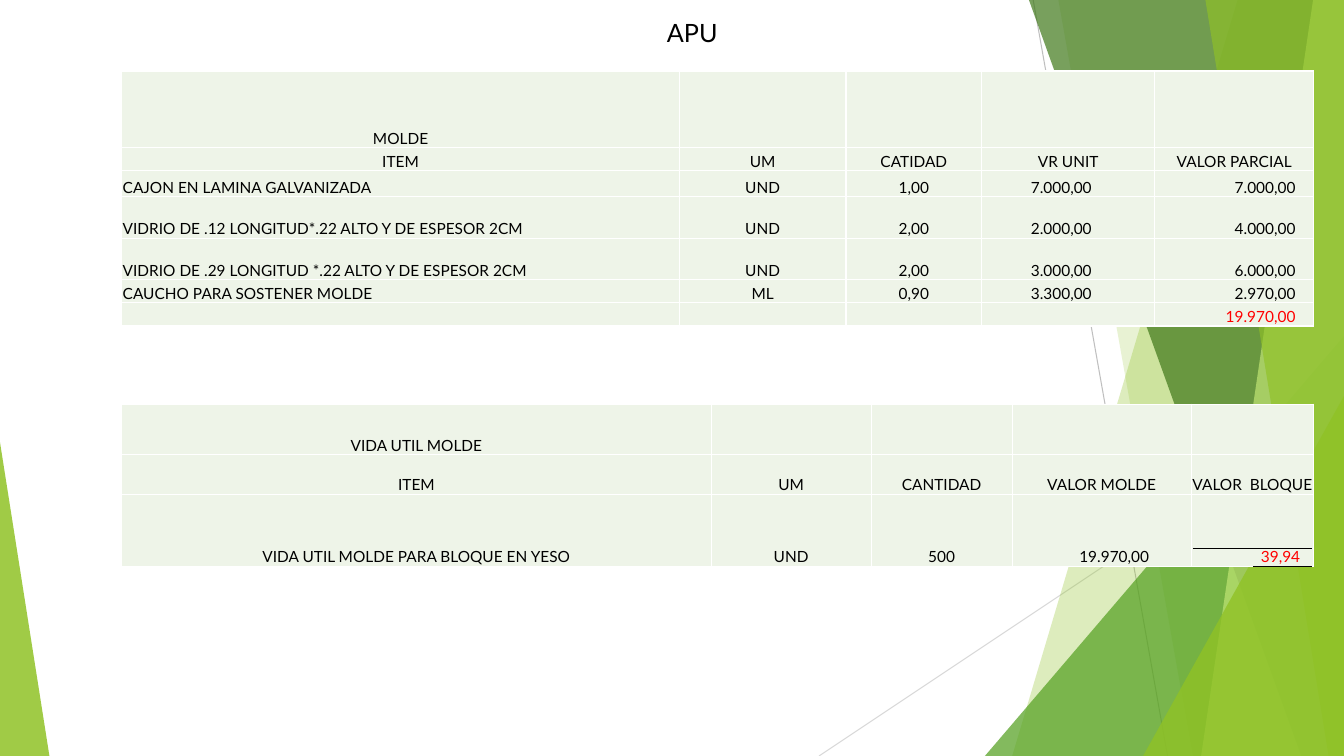
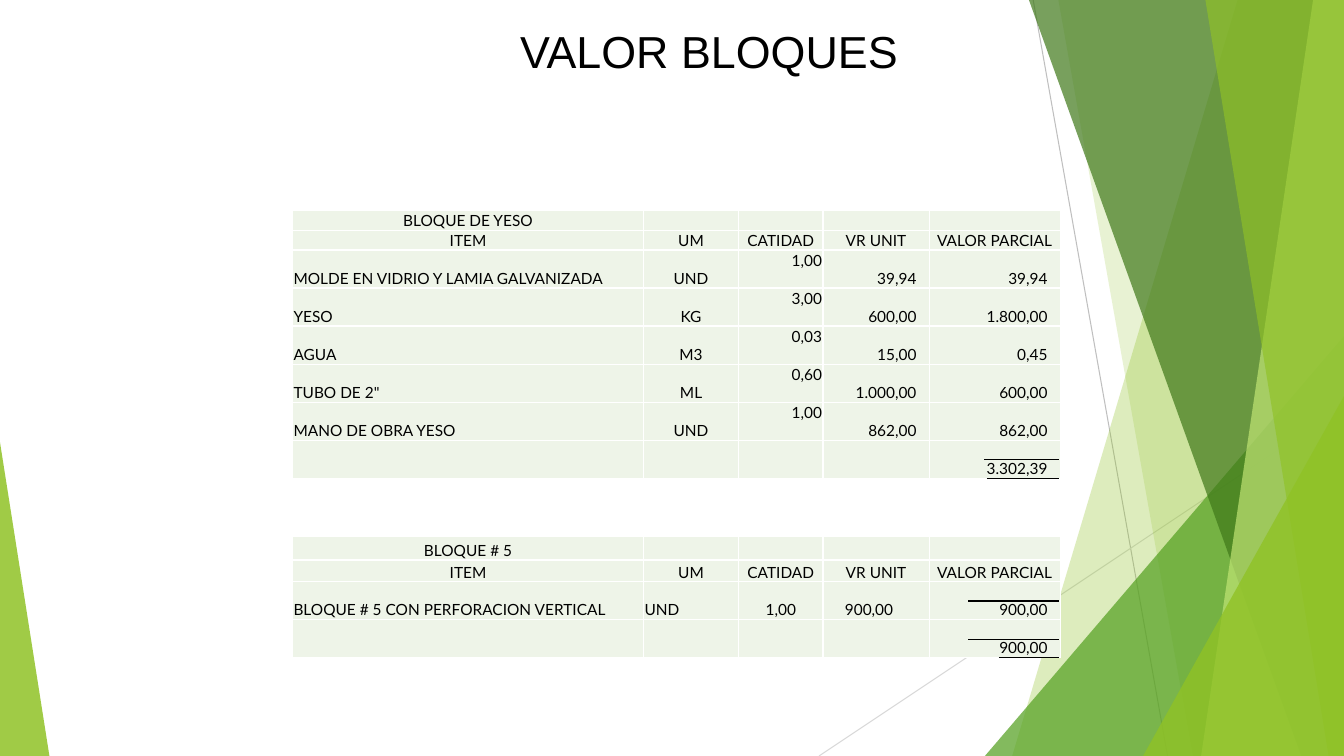
"""Build two slides of unit price tables over a shared green backdrop."""
from lxml import etree
from pptx import Presentation
from pptx.dml.color import RGBColor
from pptx.enum import shapes, text
from pptx.oxml import ns
from pptx.util import Pt

BLACK = RGBColor(0x00, 0x00, 0x00)
RED = RGBColor(0xFF, 0x00, 0x00)
PALE = RGBColor(0xEE, 0xF4, 0xE8)
LIME = RGBColor(0x90, 0xC2, 0x26)
LEAF = RGBColor(0x54, 0xA0, 0x21)
MOSS = RGBColor(0x3F, 0x78, 0x19)
MINT = RGBColor(0xC0, 0xE4, 0x74)
GRAY = RGBColor(0xBF, 0xBF, 0xBF)
SILVER = RGBColor(0xD9, 0xD9, 0xD9)
WIDE, HIGH = 960, 540
LEFT, MID, RIGHT = text.PP_ALIGN.LEFT, text.PP_ALIGN.CENTER, text.PP_ALIGN.RIGHT
INSET = 0.7


def write(frame, words, size=11, font="Lato", color=BLACK, align=MID):
    para = frame.paragraphs[0]
    para.alignment = align
    if not words:
        para._p.get_or_add_endParaRPr().set("sz", str(size * 100))
        return
    run = para.add_run()
    run.text = words
    run.font.size, run.font.name = Pt(size), font
    run.font.color.rgb = color


class Deck:
    def __init__(self):
        self.prs = Presentation()
        self.prs.slide_width, self.prs.slide_height = Pt(WIDE), Pt(HIGH)
        self.base = self.prs.slide_layouts[5]
        self.slide = None

    def page(self):
        self.slide = self.prs.slides.add_slide(self.base)

    def title(self, words, left, top, width, height, **style):
        box = self.slide.shapes.title
        box.left, box.top = Pt(left), Pt(top)
        box.width, box.height = Pt(width), Pt(height)
        write(box.text_frame, words, **style)

    def line(self, x1, y1, x2, y2, color=BLACK, width=0.75):
        link = self.slide.shapes.add_connector(
            shapes.MSO_CONNECTOR.STRAIGHT, Pt(x1), Pt(y1), Pt(x2), Pt(y2))
        link.line.color.rgb, link.line.width = color, Pt(width)
        etree.SubElement(link._element.spPr, ns.qn("a:effectLst"))
        return link

    def tint(self, shape, color, alpha):
        shape.shadow.inherit = False
        shape.line.fill.background()
        shape.fill.solid()
        shape.fill.fore_color.rgb = color
        tone = shape._element.spPr.find(".//" + ns.qn("a:srgbClr"))
        etree.SubElement(tone, ns.qn("a:alpha")).set("val", str(alpha * 1000))
        return shape

    def band(self, top, foot, color, alpha):
        pen = self.slide.shapes.build_freeform(Pt(top), 0, scale=1.0)
        pen.add_line_segments([(Pt(WIDE), 0), (Pt(WIDE), Pt(HIGH)), (Pt(foot), Pt(HIGH))])
        return self.tint(pen.convert_to_shape(), color, alpha)

    def wedge(self, left, top, width, apex, color, alpha):
        shape = self.slide.shapes.add_shape(
            shapes.MSO_SHAPE.ISOSCELES_TRIANGLE, Pt(left), Pt(top), Pt(width), Pt(HIGH - top))
        shape.adjustments[0] = apex
        return self.tint(shape, color, alpha)

    def decor(self):
        """Draw the backdrop and move it to the layout that every page uses."""
        parts = [
            self.line(738, 0, 834, HIGH, GRAY),
            self.line(WIDE, 290, 585, HIGH, SILVER),
            self.band(884, 723, LIME, 30),
            self.band(756, 852, LIME, 20),
            self.wedge(703.5, 240, 256.5, 1, LEAF, 72),
            self.band(735, 929.5, MOSS, 70),
            self.band(938, 858, MINT, 70),
            self.band(861, 949, LIME, 65),
            self.wedge(816.5, 283, 143.5, 1, LIME, 80),
            self.wedge(0, 316, 35.3, 0, LIME, 85),
        ]
        tree = self.base.element.cSld.spTree
        for part in parts:
            tree.append(part._element)

    def table(self, left, top, cols, rows, cells, aims, hot=None):
        """Fill a table; an aim is an alignment, a right inset, or "top"."""
        grid = self.slide.shapes.add_table(
            len(rows), len(cols), Pt(left), Pt(top), Pt(sum(cols)), Pt(sum(rows))).table
        grid.first_row = grid.horz_banding = False
        for col, width in zip(grid.columns, cols):
            col.width = Pt(width)
        for r, height in enumerate(rows):
            grid.rows[r].height = Pt(height)
            for c, aim in enumerate(aims):
                words = cells[r][c] if c < len(cells[r]) else ""
                self.cell(grid.cell(r, c), words, MID if r < 2 else aim,
                          RED if words and words == hot else BLACK)

    def cell(self, cell, words, aim, color):
        cell.fill.solid()
        cell.fill.fore_color.rgb = PALE
        cell.margin_left = cell.margin_right = cell.margin_top = Pt(INSET)
        cell.margin_bottom = 0
        cell.vertical_anchor = text.MSO_ANCHOR.BOTTOM
        if aim == "top":
            cell.vertical_anchor = text.MSO_ANCHOR.TOP
            aim = RIGHT
        elif aim not in (LEFT, MID):
            cell.margin_right = Pt(aim)
            aim = RIGHT
        write(cell.text_frame, words, color=color, align=aim)

    def rules(self, right, *marks):
        for y, width in marks:
            self.line(right - width, y, right, y)


HEAD = ["ITEM", "UM", "CATIDAD", "VR UNIT", "VALOR PARCIAL"]


def costs(deck):
    deck.page()
    deck.decor()
    deck.title("APU", 109, 9, 771, 29, size=18)
    deck.table(
        87, 50.7, [398.3, 119, 97, 123.6, 113.6], [54.7, 16.4, 18.7, 29.7, 29.7, 16.5, 16.5],
        [["MOLDE"], HEAD,
         ["CAJON EN LAMINA GALVANIZADA", "UND", "1,00", "7.000,00", "7.000,00"],
         ["VIDRIO DE .12 LONGITUD*.22 ALTO Y DE ESPESOR 2CM", "UND", "2,00", "2.000,00", "4.000,00"],
         ["VIDRIO DE .29 LONGITUD *.22 ALTO Y DE ESPESOR 2CM", "UND", "2,00", "3.000,00", "6.000,00"],
         ["CAUCHO PARA SOSTENER MOLDE", "ML", "0,90", "3.300,00", "2.970,00"],
         ["", "", "", "", "19.970,00"]],
        [LEFT, MID, MID, 45, 13], hot="19.970,00")
    deck.table(
        87, 288.7, [421, 114.3, 100.7, 127.9, 87.5], [36.2, 28.2, 51.4],
        [["VIDA UTIL MOLDE"],
         ["ITEM", "UM", "CANTIDAD", "VALOR MOLDE", "VALOR  BLOQUE"],
         ["VIDA UTIL MOLDE PARA BLOQUE EN YESO", "UND", "500", "19.970,00", "39,94"]],
        [MID, MID, MID, 30, 9.6], hot="39,94")
    deck.rules(937, (391.5, 85), (405, 42))


def blocks(deck):
    deck.page()
    deck.title("VALOR BLOQUES", 193.5, 13, 626, 46, size=32, font="Arial")
    cols = [250.7, 67.9, 60.3, 75.8, 93.6]
    deck.table(
        209, 150.2, cols, [13.6] * 2 + [27.2] * 6,
        [["BLOQUE DE YESO"], HEAD,
         ["MOLDE EN VIDRIO Y LAMIA GALVANIZADA", "UND", "1,00", "39,94", "39,94"],
         ["YESO", "KG", "3,00", "600,00", "1.800,00"],
         ["AGUA", "M3", "0,03", "15,00", "0,45"],
         ['TUBO DE 2"', "ML", "0,60", "1.000,00", "600,00"],
         ["MANO DE OBRA YESO", "UND", "1,00", "862,00", "862,00"],
         ["", "", "", "", "3.302,39"]],
        [LEFT, MID, "top", 9, 9])
    deck.table(
        209, 383.4, cols, [16.6, 15.3, 27.1, 27.1],
        [["BLOQUE # 5"], HEAD,
         ["BLOQUE # 5 CON PERFORACION VERTICAL", "UND", "1,00", "900,00", "900,00"],
         ["", "", "", "", "900,00"]],
        [LEFT, LEFT, MID, 25.7, 9])
    deck.rules(756.5, (328, 53.5), (341.8, 51.5), (429.3, 65), (456.5, 65), (470, 43))


def main():
    deck = Deck()
    costs(deck)
    blocks(deck)
    deck.prs.save("out.pptx")


if __name__ == "__main__":
    main()
